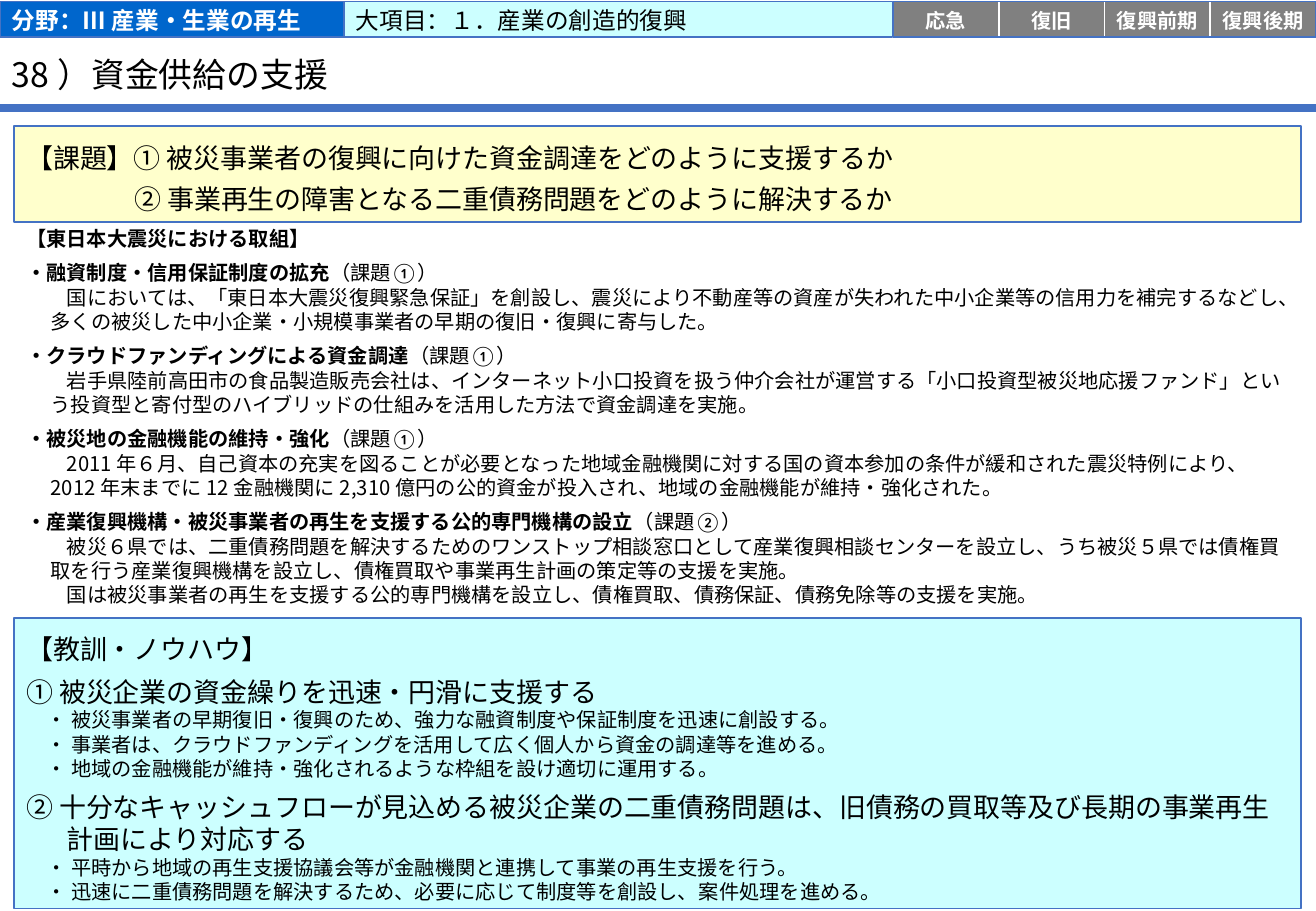
from lxml.etree import SubElement
from pptx import Presentation
from pptx.dml.color import RGBColor
from pptx.enum.shapes import MSO_CONNECTOR, MSO_SHAPE
from pptx.enum.text import MSO_ANCHOR, PP_ALIGN
from pptx.oxml.ns import qn
from pptx.util import Cm, Pt

SANS, LATIN = "Noto Sans CJK JP", "Calibri"
BLUE, BLACK, WHITE = "4472C4", "000000", "FFFFFF"
AQUA, CREAM, NAVY, GRAY = "CCFFFF", "FFFFCC", "0066CC", "808080"
WIDE, TALL = 27.51, 19.05
EDGE, SPAN = 0.3, 26.9

PHASES = ["応急", "復旧", "復興前期", "復興後期"]
ISSUES = [
    ("【課題】① 被災事業者の復興に向けた資金調達をどのように支援するか", 0),
    ("② 事業再生の障害となる二重債務問題をどのように解決するか", 2.26),
]
ACTIONS = [
    ("・融資制度・信用保証制度の拡充", "（課題①）", [
        "国においては、「東日本大震災復興緊急保証」を創設し、震災により不動産等の資産が失われた中小企業等の信用力を補完するなどし、多くの被災した中小企業・小規模事業者の早期の復旧・復興に寄与した。"]),
    ("・クラウドファンディングによる資金調達", "（課題①）", [
        "岩手県陸前高田市の食品製造販売会社は、インターネット小口投資を扱う仲介会社が運営する「小口投資型被災地応援ファンド」という投資型と寄付型のハイブリッドの仕組みを活用した方法で資金調達を実施。"]),
    ("・被災地の金融機能の維持・強化", "（課題①）", [
        "2011年６月、自己資本の充実を図ることが必要となった地域金融機関に対する国の資本参加の条件が緩和された震災特例により、2012年末までに12金融機関に2,310億円の公的資金が投入され、地域の金融機能が維持・強化された。"]),
    ("・産業復興機構・被災事業者の再生を支援する公的専門機構の設立", "（課題②）", [
        "被災６県では、二重債務問題を解決するためのワンストップ相談窓口として産業復興相談センターを設立し、うち被災５県では債権買取を行う産業復興機構を設立し、債権買取や事業再生計画の策定等の支援を実施。",
        "国は被災事業者の再生を支援する公的専門機構を設立し、債権買取、債務保証、債務免除等の支援を実施。"]),
]
LESSONS = [
    ("① 被災企業の資金繰りを迅速・円滑に支援する", [
        "・ 被災事業者の早期復旧・復興のため、強力な融資制度や保証制度を迅速に創設する。",
        "・ 事業者は、クラウドファンディングを活用して広く個人から資金の調達等を進める。",
        "・ 地域の金融機能が維持・強化されるような枠組を設け適切に運用する。"]),
    ("② 十分なキャッシュフローが見込める被災企業の二重債務問題は、旧債務の買取等及び長期の事業再生計画により対応する", [
        "・ 平時から地域の再生支援協議会等が金融機関と連携して事業の再生支援を行う。",
        "・ 迅速に二重債務問題を解決するため、必要に応じて制度等を創設し、案件処理を進める。"]),
]


def color(code):
    return RGBColor.from_string(code)


def assign(target, values):
    for name, value in values.items():
        setattr(target, name, value)


def frame(shape, pads, anchor):
    left, top, right, bottom = (Cm(pad) for pad in pads)
    assign(shape.text_frame, {
        "margin_left": left, "margin_top": top, "margin_right": right,
        "margin_bottom": bottom, "word_wrap": True, "vertical_anchor": anchor})


def panel(slide, box, fill=None, line=None, pads=(0.25, 0.05, 0.25, 0),
          anchor=MSO_ANCHOR.MIDDLE):
    shape = slide.shapes.add_shape(MSO_SHAPE.RECTANGLE, *(Cm(n) for n in box))
    shape.shadow.inherit = False
    if fill:
        shape.fill.solid()
        shape.fill.fore_color.rgb = color(fill)
    else:
        shape.fill.background()
    if line:
        shape.line.color.rgb = color(line)
        shape.line.width = Pt(1)
    else:
        shape.line.fill.background()
    frame(shape, pads, anchor)
    return shape


def write(shape, runs, size, tint=BLACK, left=0, first=0, **format):
    text = shape.text_frame
    para = text.paragraphs[0]
    if para.runs:
        para = text.add_paragraph()
    assign(para, {"alignment": PP_ALIGN.LEFT, **format})
    props = para._p.get_or_add_pPr()
    props.set("marL", str(Cm(left)))
    props.set("indent", str(Cm(first)))
    for words, face, bold in runs:
        run = para.add_run()
        run.text = words
        assign(run.font, {"size": Pt(size), "name": face, "bold": bold})
        run.font.color.rgb = color(tint)
        SubElement(run.font._element, qn("a:ea")).set("typeface", face)


def header(slide, left, top, width, height):
    field, start = 7.19, 18.67
    shape = panel(slide, (left, top, field, height), NAVY, BLUE)
    write(shape, [("分野：Ⅲ 産業・生業の再生", LATIN, True)], 14, WHITE)
    shape = panel(slide, (left + field, top, start - field, height), AQUA, BLUE)
    write(shape, [("大項目：１．産業の創造的復興", LATIN, False)], 14)
    step = (width - start) / len(PHASES)
    for index, phase in enumerate(PHASES):
        box = (left + start + index * step, top, step, height)
        shape = panel(slide, box, GRAY, WHITE, (0, 0.05, 0, 0))
        write(shape, [(phase, LATIN, True)], 12, WHITE, alignment=PP_ALIGN.CENTER)
    panel(slide, (left + start, top, width - start, height), line=BLUE)


def title(slide, left, top, width, height):
    shape = slide.shapes.add_textbox(Cm(left), Cm(top), Cm(width), Cm(height))
    frame(shape, (0.25, 0.1, 0.25, 0), MSO_ANCHOR.MIDDLE)
    write(shape, [("38）資金供給の支援", SANS, False)], 20, line_spacing=0.9)
    base = Cm(top + height - 0.02)
    rule = slide.shapes.add_connector(
        MSO_CONNECTOR.STRAIGHT, Cm(left), base, Cm(left + WIDE), base)
    rule.line.color.rgb = color(BLUE)
    rule.line.width = Pt(4.5)
    SubElement(rule._element.spPr, qn("a:effectLst"))


def issues(slide, *box):
    shape = panel(slide, box, CREAM, BLUE, (0.25, 0.3, 0.25, 0.3))
    for words, left in ISSUES:
        write(shape, [(words, SANS, False)], 16, left=left, line_spacing=Pt(24))


def actions(slide, *box):
    shape = panel(slide, box, WHITE, pads=(0.25, 0.13, 0.25, 0.13))
    write(shape, [("【東日本大震災における取組】", LATIN, True)], 12)
    for head, issue, notes in ACTIONS:
        runs = [(head, LATIN, True), (issue, LATIN, False)]
        write(shape, runs, 12, space_before=Pt(6))
        for note in notes:
            write(shape, [(note, SANS, False)], 12, left=0.51, first=0.34)


def lessons(slide, *box):
    shape = panel(slide, box, AQUA, BLUE, (0.25, 0.3, 0.25, 0), MSO_ANCHOR.TOP)
    write(shape, [("【教訓・ノウハウ】", SANS, False)], 16)
    for head, notes in LESSONS:
        write(shape, [(head, SANS, False)], 16, left=0.84, first=-0.84,
              space_before=Pt(6))
        for note in notes:
            write(shape, [(note, SANS, False)], 12, left=0.42)


def main():
    deck = Presentation()
    assign(deck, {"slide_width": Cm(WIDE), "slide_height": Cm(TALL)})
    slide = deck.slides.add_slide(deck.slide_layouts[6])
    actions(slide, EDGE, 4.75, SPAN, 7.92)
    title(slide, 0, 0.81, 24.08, 1.47)
    header(slide, 0, 0.03, WIDE, 0.74)
    issues(slide, EDGE, 2.64, SPAN, 2.01)
    lessons(slide, EDGE, 12.93, SPAN, 6.07)
    deck.save("out.pptx")


if __name__ == "__main__":
    main()
